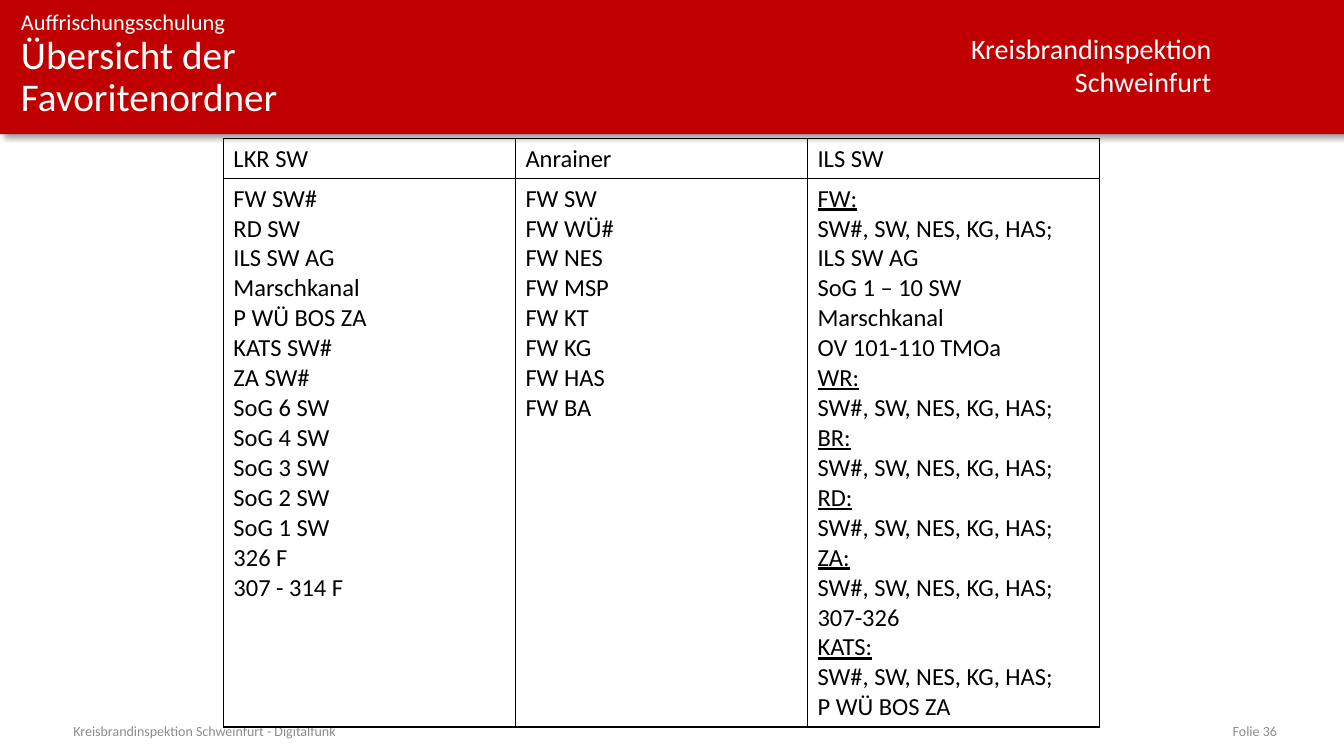
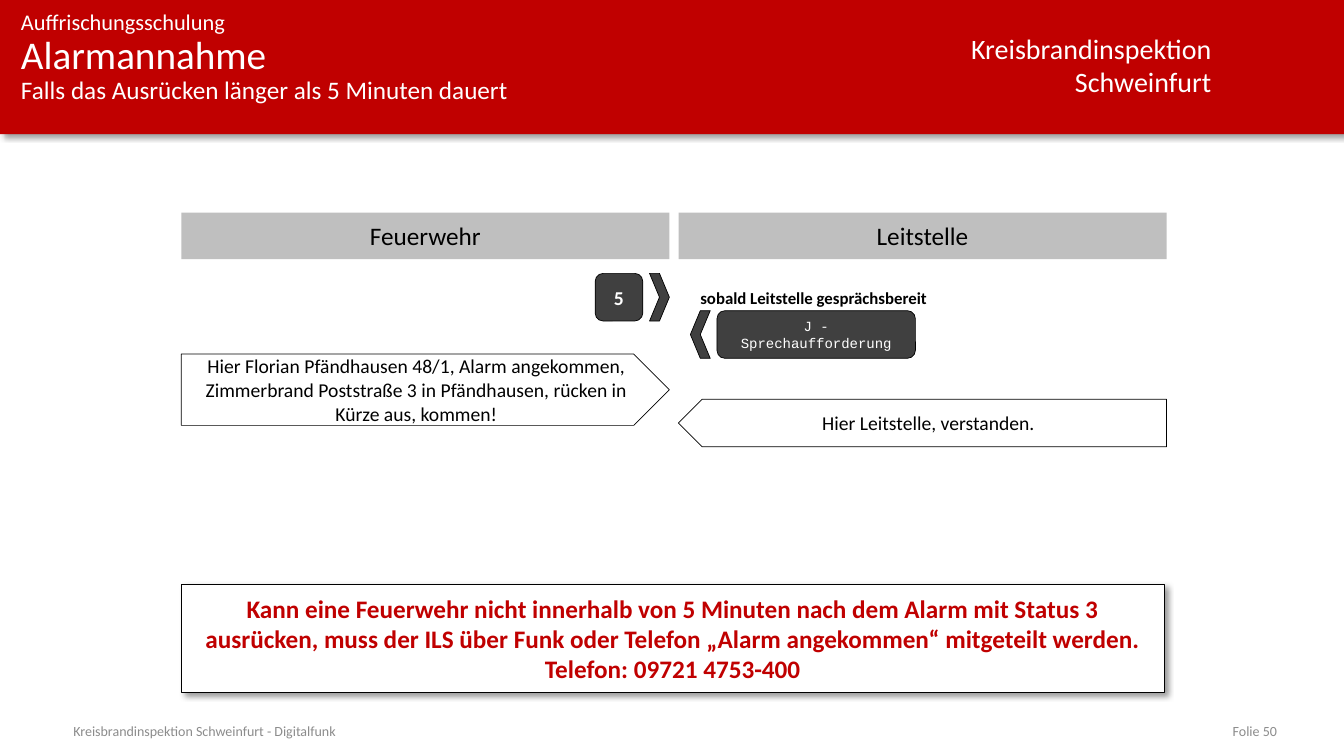
from lxml import etree
from pptx import Presentation
from pptx.dml.color import RGBColor
from pptx.enum.shapes import MSO_SHAPE
from pptx.enum.text import MSO_ANCHOR, PP_ALIGN
from pptx.oxml.ns import qn
from pptx.util import Cm, Pt

RECT, ROUNDED = MSO_SHAPE.RECTANGLE, MSO_SHAPE.ROUNDED_RECTANGLE
CHEVRON, PLATE = MSO_SHAPE.CHEVRON, MSO_SHAPE.PENTAGON
LEFT, CENTER, RIGHT = PP_ALIGN.LEFT, PP_ALIGN.CENTER, PP_ALIGN.RIGHT
TOP, MIDDLE = MSO_ANCHOR.TOP, MSO_ANCHOR.MIDDLE

COLORS = {"red": "C00000", "white": "FFFFFF", "black": "000000",
          "footer": "8C8C8C", "lane": "BFBFBF", "key": "404040"}
BODY_FONT, KEY_FONT = "Calibri", "Courier New"
WIDTH, HEIGHT = 33.87, 19.05
DEFAULT_INSETS, NO_INSETS, LANE_INSETS = (0.25, 0.13), (0, 0), (0.2, 0.2)

# Content
COURSE = "Auffrischungsschulung"
ORGANISATION = ["Kreisbrandinspektion", "Schweinfurt"]
FOOTER = "Kreisbrandinspektion Schweinfurt - Digitalfunk"

FOLDERS_TITLE = [("Übersicht der", 28), ("Favoritenordner", 28)]
GROUPS = "SW#, SW, NES, KG, HAS;"
FOLDERS = {
    "LKR SW": ["FW SW#", "RD SW", "ILS SW AG", "Marschkanal", "P WÜ BOS ZA",
               "KATS SW#", "ZA SW#", "SoG 6 SW", "SoG 4 SW", "SoG 3 SW",
               "SoG 2 SW", "SoG 1 SW", "326 F", "307 - 314 F"],
    "Anrainer": ["FW SW", "FW WÜ#", "FW NES", "FW MSP", "FW KT", "FW KG",
                 "FW HAS", "FW BA"],
    "ILS SW": ["FW:", GROUPS, "ILS SW AG", "SoG 1 – 10 SW", "Marschkanal",
               "OV 101-110 TMOa", "WR:", GROUPS, "BR:", GROUPS, "RD:", GROUPS,
               "ZA:", GROUPS, "307-326", "KATS:", GROUPS, "P WÜ BOS ZA"],
}

ALARM_TITLE = [("Alarmannahme", 28),
               ("Falls das Ausrücken länger als 5 Minuten dauert", 18)]
LANES = ["Feuerwehr", "Leitstelle"]
STATUS_KEY = "5"
REPLY_KEY = "J - Sprechaufforderung"
REPLY_NOTE = "sobald Leitstelle gesprächsbereit"
# Lane, top, height, message
MESSAGES = [
    (0, 8.92, 1.8, "Hier Florian Pfändhausen 48/1, Alarm angekommen, Zimmerbrand "
                   "Poststraße 3 in Pfändhausen, rücken in Kürze aus, kommen!"),
    (1, 10.06, 1.2, "Hier Leitstelle, verstanden."),
]
NOTICE = ["Kann eine Feuerwehr nicht innerhalb von 5 Minuten nach dem Alarm mit "
          "Status 3 ausrücken, muss der ILS über Funk oder Telefon „Alarm "
          "angekommen“ mitgeteilt werden.",
          "Telefon: 09721 4753-400"]


def rgb(name):
    return RGBColor.from_string(COLORS[name])


def style_font(font, size, color, bold=False, name=BODY_FONT):
    font.name, font.size, font.bold = name, Pt(size), bold
    font.color.rgb = rgb(color)


def set_text(shape, lines, size, color="black", align=CENTER, anchor=MIDDLE,
             insets=DEFAULT_INSETS, bold=False, font=BODY_FONT, wrap=True):
    frame = shape.text_frame
    frame.word_wrap, frame.vertical_anchor = wrap, anchor
    frame.margin_left = frame.margin_right = Cm(insets[0])
    frame.margin_top = frame.margin_bottom = Cm(insets[1])
    frame.text = "\n".join(lines)
    for paragraph in frame.paragraphs:
        paragraph.alignment = align
        for run in paragraph.runs:
            style_font(run.font, size, color, bold, font)


def add_label(slide, box, lines, size, **style):
    label = slide.shapes.add_textbox(*map(Cm, box))
    set_text(label, lines, size, **style)
    return label


def add_block(slide, kind, box, fill, outlined=True, flipped=False):
    block = slide.shapes.add_shape(kind, *map(Cm, box))
    block.shadow.inherit = False
    block.fill.solid()
    block.fill.fore_color.rgb = rgb(fill)
    if outlined:
        block.line.color.rgb = rgb("black")
        block.line.width = Pt(0.5)
    else:
        block.line.fill.background()
    if flipped:
        block._element.spPr.find(qn("a:xfrm")).set("flipH", "1")
    return block


def add_shadow(block):
    effects = block._element.spPr.find(qn("a:effectLst"))
    shadow = etree.SubElement(effects, qn("a:outerShdw"), blurRad=str(Pt(4)),
                              dist=str(Pt(3)), dir=str(45 * 60000),
                              algn="tl", rotWithShape="0")
    color = etree.SubElement(shadow, qn("a:srgbClr"), val=COLORS["black"])
    etree.SubElement(color, qn("a:alpha"), val="40000")


def add_page(prs, title_lines, number):
    """Blank slide with the shared band, title and footer."""
    slide = prs.slides.add_slide(prs.slide_layouts[6])
    add_shadow(add_block(slide, RECT, (0, 0, WIDTH, 3.38), "red", outlined=False))
    add_label(slide, (21.95, 0.66, 8.83, 1.96), ORGANISATION, 20,
              color="white", align=RIGHT, anchor=TOP)
    add_label(slide, (0.53, 0.2, 21.4, 0.69), [COURSE], 16, color="white",
              align=LEFT, anchor=TOP, insets=NO_INSETS)

    title = add_label(slide, (0.53, 0.89, 21.4, 2.5), [], 28, align=LEFT,
                      anchor=TOP, insets=NO_INSETS)
    paragraph = title.text_frame.paragraphs[0]
    paragraph.line_spacing = 0.9
    for index, (line, size) in enumerate(title_lines):
        if index:
            paragraph.add_line_break()
        run = paragraph.add_run()
        run.text = line
        style_font(run.font, size, "white")

    for left, width, text, align in [(1.85, 20.45, FOOTER, LEFT),
                                     (24.28, 7.9, f"Folie {number}", RIGHT)]:
        add_label(slide, (left, 18.16, width, 0.51), [text], 10, color="footer",
                  align=align, insets=NO_INSETS)
    return slide


def border_cell(cell):
    properties = cell._tc.get_or_add_tcPr()
    for index, side in enumerate(["lnL", "lnR", "lnT", "lnB"]):
        line = etree.Element(qn(f"a:{side}"), w=str(Pt(1)))
        fill = etree.SubElement(line, qn("a:solidFill"))
        etree.SubElement(fill, qn("a:srgbClr"), val=COLORS["black"])
        properties.insert(index, line)


def build_folders(prs):
    slide = add_page(prs, FOLDERS_TITLE, 36)
    column_width, row_heights = 7.36, (1.0, 13.82)
    table = slide.shapes.add_table(
        2, len(FOLDERS), Cm(5.63), Cm(3.5), Cm(column_width * len(FOLDERS)),
        Cm(sum(row_heights))).table
    table.first_row = table.horz_banding = False
    for row, height in zip(table.rows, row_heights):
        row.height = Cm(height)
    for column, (heading, entries) in enumerate(FOLDERS.items()):
        table.columns[column].width = Cm(column_width)
        for row, lines in enumerate([[heading], entries]):
            cell = table.cell(row, column)
            cell.fill.background()
            border_cell(cell)
            cell.margin_top = cell.margin_bottom = Cm(0.13)
            cell.text = "\n".join(lines)
            for paragraph in cell.text_frame.paragraphs:
                for run in paragraph.runs:
                    style_font(run.font, 17.5, "black")
                    run.font.underline = run.text.endswith(":")


def build_alarm(prs):
    slide = add_page(prs, ALARM_TITLE, 50)
    lane_width, lane_gap = 12.3, 0.23
    lane_lefts = [4.57 + i * (lane_width + lane_gap) for i in range(len(LANES))]
    for left, name in zip(lane_lefts, LANES):
        lane = add_block(slide, RECT, (left, 5.36, lane_width, 1.17), "lane",
                         outlined=False)
        set_text(lane, [name], 18, insets=LANE_INSETS, wrap=False)

    # Radio keys, each with a chevron on the side it sends to
    key_height, chevron_width, key_gap = 1.2, 0.5, 0.17
    status_top, reply_top, reply_left = 6.89, 7.83, 17.4
    status_chevron = lane_lefts[0] + lane_width - chevron_width
    status_left = status_chevron - key_gap - key_height
    key_left = reply_left + chevron_width + key_gap
    for left, top, width, chevron_left, flipped, text, style in [
            (status_left, status_top, key_height, status_chevron, False, STATUS_KEY,
             {"size": 14, "bold": True}),
            (key_left, reply_top, 5.0, reply_left, True, REPLY_KEY,
             {"size": 10, "font": KEY_FONT})]:
        key = add_block(slide, ROUNDED, (left, top, width, key_height), "key")
        set_text(key, [text], color="white", **style)
        add_block(slide, CHEVRON, (chevron_left, top, chevron_width, key_height),
                  "key", flipped=flipped)

    # Spoken messages
    for lane, top, height, text in MESSAGES:
        message = add_block(slide, PLATE, (lane_lefts[lane], top, lane_width, height),
                            "white", flipped=lane == 1)
        set_text(message, [text], 14)

    add_label(slide, (reply_left, 7.11, 6.4, 0.76), [REPLY_NOTE], 12, align=LEFT,
              anchor=TOP, bold=True)
    notice = add_block(slide, RECT, (lane_lefts[0], 14.73, 24.77, 2.72), "white")
    add_shadow(notice)
    set_text(notice, NOTICE, 18, color="red", bold=True)


def main():
    prs = Presentation()
    prs.slide_width, prs.slide_height = Cm(WIDTH), Cm(HEIGHT)
    build_folders(prs)
    build_alarm(prs)
    prs.save("out.pptx")


if __name__ == "__main__":
    main()
